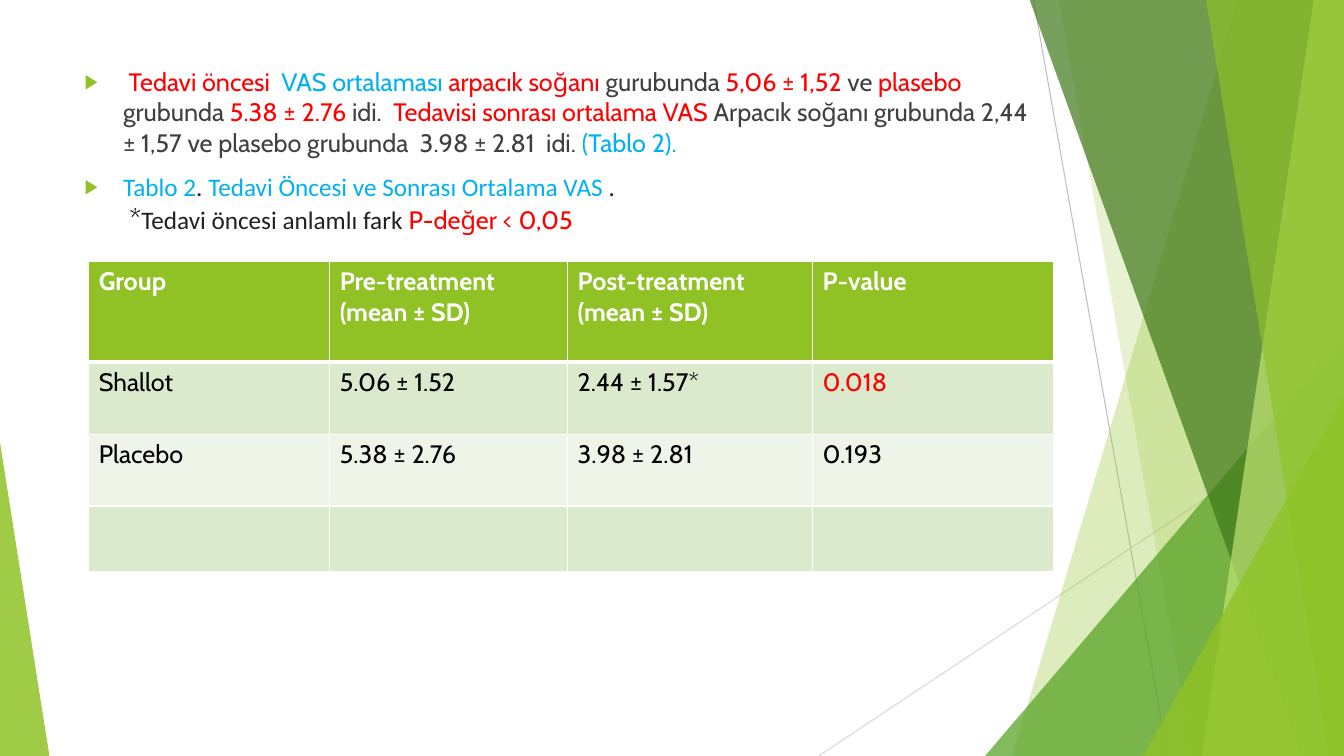
"""Build the slide on mean VAS scores before and after treatment."""
from lxml.etree import SubElement
from pptx import Presentation
from pptx.dml.color import RGBColor
from pptx.enum.shapes import MSO_CONNECTOR, MSO_SHAPE
from pptx.enum.text import MSO_AUTO_SIZE
from pptx.oxml import parse_xml
from pptx.oxml.ns import nsdecls, qn
from pptx.util import Inches, Pt

COLORS = {
    "lime": "90C226", "green": "54A021", "forest": "3F7819", "pale": "C0E474",
    "gray": "404040", "red": "FF0000", "blue": "00B0F0", "ink": "202124",
    "black": "000000", "white": "FFFFFF", "band": "DBE9CD", "light": "EEF4E8",
    "line": "BFBFBF", "faint": "D9D9D9",
}


def color(name):
    return RGBColor.from_string(COLORS[name])


def paint(shape, fill_name, opacity):
    shape.shadow.inherit = False
    shape.line.fill.background()
    shape.fill.solid()
    shape.fill.fore_color.rgb = color(fill_name)
    fill_color = shape._element.spPr.find(qn("a:solidFill"))[0]
    SubElement(fill_color, qn("a:alpha"), val=str(opacity * 1000))


presentation = Presentation()
presentation.slide_width = Inches(13.33)
presentation.slide_height = Inches(7.5)
slide = presentation.slides.add_slide(presentation.slide_layouts[1])
shapes = slide.shapes
title = shapes.title._element
title.getparent().remove(title)

for start_x, start_y, end_x, line_name in [
    (10.25, 0, 11.58, "line"), (13.33, 4.03, 8.12, "faint"),
]:
    connector = shapes.add_connector(
        MSO_CONNECTOR.STRAIGHT, Inches(start_x), Inches(start_y), Inches(end_x), Inches(7.5))
    connector.line.color.rgb = color(line_name)
    connector.line.width = Pt(0.75)
    SubElement(connector._element.spPr, qn("a:effectLst"))

facets = [
    ("band", 12.28, 10.04, "lime", 30),
    ("band", 10.5, 11.83, "lime", 20),
    ("triangle", 9.77, 3.33, 3.56, 1, "green", 72),
    ("band", 10.21, 12.91, "forest", 70),
    ("band", 13.03, 11.92, "pale", 70),
    ("band", 11.96, 13.18, "lime", 65),
    ("triangle", 11.34, 3.93, 1.99, 1, "lime", 80),
    ("triangle", 0, 4.39, 0.49, 0, "lime", 85),
]
for kind, *geometry, fill_name, opacity in facets:
    if kind == "band":
        top_x, bottom_x = geometry
        builder = shapes.build_freeform(Inches(top_x), Inches(-0.01))
        corners = [(13.33, -0.01), (13.33, 7.5), (bottom_x, 7.5)]
        builder.add_line_segments([(Inches(x), Inches(y)) for x, y in corners])
        facet = builder.convert_to_shape()
    else:
        left, top, width, apex = geometry
        facet = shapes.add_shape(
            MSO_SHAPE.ISOSCELES_TRIANGLE,
            Inches(left), Inches(top), Inches(width), Inches(7.5 - top))
        facet.adjustments[0] = apex
    paint(facet, fill_name, opacity)

body = slide.placeholders[1]
shapes._spTree.append(body._element)
body.left, body.top = Inches(0.74), Inches(0.61)
body.width, body.height = Inches(9.72), Inches(6)
text_frame = body.text_frame
text_frame.word_wrap = True
text_frame.auto_size = MSO_AUTO_SIZE.NONE

findings = [
    [
        (" ", "gray", "Cabin", 18),
        ("Tedavi öncesi  ", "red", "Cabin", 18),
        ("VAS ortalaması ", "blue", "Cabin", 18),
        ("arpacık soğanı ", "red", "Cabin", 18),
        ("gurubunda ", "gray", "Cabin", 18),
        ("5,06 ± 1,52 ", "red", "Cabin", 18),
        ("ve ", "gray", "Cabin", 18),
        ("plasebo", "red", "Cabin", 18),
        (" grubunda ", "gray", "Cabin", 18),
        ("5.38 ± 2.76 ", "red", "Cabin", 18),
        ("idi.  ", "gray", "Cabin", 18),
        ("Tedavisi sonrası ortalama VAS ", "red", "Cabin", 18),
        ("Arpacık soğanı grubunda 2,44 ± 1,57 ve plasebo grubunda  3.98 ± 2.81  idi. ",
         "gray", "Cabin", 18),
        ("(Tablo 2).", "blue", "Cabin", 18),
    ],
    [
        ("Tablo 2", "blue", "Calibri", 18),
        (". ", "ink", "Calibri", 18),
        ("Tedavi Öncesi ve Sonrası Ortalama VAS ", "blue", "Calibri", 18),
        (".", "ink", "Calibri", 18),
        None,
        (" ", "ink", "Calibri", 20),
        ("*", "black", "Cabin", 20),
        ("Tedavi öncesi anlamlı fark ", "ink", "Calibri", 18),
        ("P-değer < 0,05", "red", "Cabin", 18),
    ],
]
for index, pieces in enumerate(findings):
    paragraph = text_frame.add_paragraph() if index else text_frame.paragraphs[0]
    paragraph.space_before = Pt(10 if index else 0)
    properties = paragraph._p.get_or_add_pPr()
    properties.set("marL", str(Inches(0.38)))
    properties.set("indent", str(Inches(-0.38)))
    bullet_color = SubElement(properties, qn("a:buClr"))
    SubElement(bullet_color, qn("a:srgbClr"), val=COLORS["lime"])
    SubElement(properties, qn("a:buSzPct"), val="80000")
    SubElement(properties, qn("a:buChar"), char="▶")
    for piece in pieces:
        if piece is None:
            paragraph.add_line_break()
            SubElement(paragraph._p.find(qn("a:br")), qn("a:rPr"), sz="1800")
            continue
        text, color_name, font_name, size = piece
        run = paragraph.add_run()
        run.text = text
        run.font.name = font_name
        run.font.size = Pt(size)
        run.font.color.rgb = color(color_name)

rows = [
    ["Group", "Pre-treatment (mean ± SD)", "Post-treatment (mean ± SD)", "P-value"],
    ["Shallot", "5.06 ± 1.52", "2.44 ± 1.57*", "0.018"],
    ["Placebo", "5.38 ± 2.76", "3.98 ± 2.81", "0.193"],
    ["", "", "", ""],
]
row_fills = ["lime", "band", "light", "band"]
table = shapes.add_table(
    4, 4, Inches(0.88), Inches(2.59), Inches(9.57), Inches(3.08)).table
for column, width in zip(table.columns, [2.39, 2.36, 2.43, 2.39]):
    column.width = Inches(width)
for row, height in zip(table.rows, [1, 0.72, 0.71, 0.65]):
    row.height = Inches(height)

for row_index, values in enumerate(rows):
    for column_index, value in enumerate(values):
        cell = table.cell(row_index, column_index)
        cell.text_frame.text = value
        cell.fill.solid()
        cell.fill.fore_color.rgb = color(row_fills[row_index])
        for run in cell.text_frame.paragraphs[0].runs:
            run.font.name = "Cabin"
            run.font.size = Pt(18)
            run.font.bold = row_index == 0
            text_color = "white" if row_index == 0 else "red" if value == "0.018" else "black"
            run.font.color.rgb = color(text_color)
        for position, side in enumerate(["lnL", "lnR", "lnT", "lnB"]):
            heavy = (row_index, side) in [(0, "lnB"), (1, "lnT")]
            border = parse_xml(
                f'<a:{side} {nsdecls("a")} w="{Pt(3 if heavy else 1)}"><a:solidFill>'
                f'<a:srgbClr val="{COLORS["white"]}"/></a:solidFill></a:{side}>')
            cell._tc.get_or_add_tcPr().insert(position, border)

presentation.save("out.pptx")
